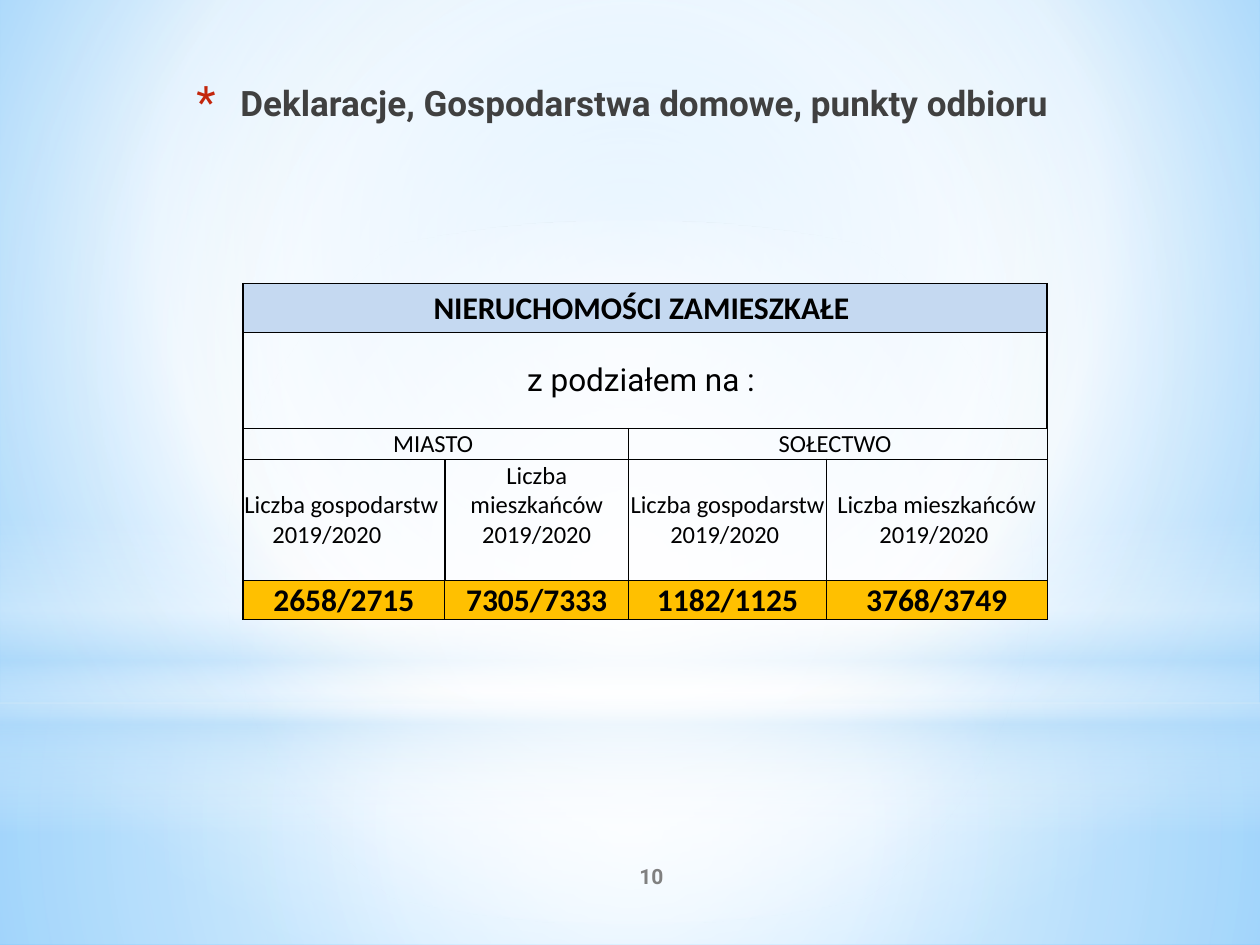
from lxml.etree import SubElement
from pptx import Presentation
from pptx.dml.color import RGBColor as Rgb
from pptx.enum.shapes import MSO_SHAPE as Preset
from pptx.enum.text import MSO_ANCHOR as Anchor, MSO_AUTO_SIZE as AutoSize, PP_ALIGN as Align
from pptx.oxml import parse_xml
from pptx.oxml.ns import nsdecls, qn
from pptx.util import Pt

THEME = {
    "ink": "000000", "title": "404040", "number": "808080", "bullet": "C3260C",
    "header": "C5D9F1", "result": "FFC000",
    "heading_font": "Roboto", "table_font": "Calibri",
    "title_size": 20, "large": 18, "small": 14, "number_size": 12,
    "thin": 0.5, "thick": 1,
}

TITLE = "Deklaracje, Gospodarstwa domowe, punkty odbioru"
PAGE_NUMBER = "10"

BACKDROP = {"stops": [(0, "9ED5FF", 100), (60, "FFFFFF", 100), (100, "5BB9FF", 100)],
            "focus": (20, 10, 20, 60)}
GLOWS = [
    {"box": (0, 401.76, 720, 138.24), "preset": Preset.RECTANGLE, "focus": (50, 50, 50, 50),
     "stops": [(0, "FFFFFF", 91), (37, "FFFFFF", 76), (100, "B4DCFA", 79)]},
    {"box": (0, 0, 720, 401.76), "preset": Preset.RECTANGLE, "focus": (50, 50, 50, 50),
     "stops": [(0, "FFFFFF", 89), (48, "FFFFFF", 62), (100, "B4DCFA", 79)]},
    {"box": (0, 296.64, 720, 180), "preset": Preset.RECTANGLE, "focus": None,
     "stops": [(0, "FFFFFF", 0), (29, "FFFFFF", 30), (45, "B4DCFA", 40),
               (55, "FFFFFF", 26), (65, "B4DCFA", 60), (100, "FFFFFF", 0)]},
    {"box": (0, 126, 720, 401.76), "preset": Preset.OVAL, "focus": (50, 50, 50, 50),
     "stops": [(0, "FFFFFF", 100), (56, "FFFFFF", 0)]},
]

TABLE_ORIGIN = (138.96, 162)
COLUMN_WIDTHS = (115.2, 105.12, 113.04, 126)
ROWS = [
    {"height": 28.08, "anchor": Anchor.MIDDLE, "size": "large", "bold": True, "fill": "header",
     "cells": [("NIERUCHOMOŚCI ZAMIESZKAŁE ", "LRT")]},
    {"height": 54.72, "anchor": Anchor.MIDDLE, "size": "large", "font": "heading_font",
     "cells": [("z podziałem na : ", "LR")]},
    {"height": 17.28, "cells": [("MIASTO ", "L"), ("SOŁECTWO ", "B")]},
    {"height": 68.4, "bottom": 17.1,
     "cells": [("Liczba gospodarstw\n2019/2020", "LR"), ("Liczba mieszkańców 2019/2020", "L"),
               ("Liczba gospodarstw\v2019/2020 ", "TR"), ("Liczba mieszkańców 2019/2020 ", "LT")]},
    {"height": 22.32, "size": "large", "bold": True, "fill": "result",
     "cells": [("2658/2715", "L"), ("7305/7333", ""), ("1182/1125", "R"), ("3768/3749", "L")]},
]


def apply(target, values):
    for key, value in values.items():
        setattr(target, key, value)


def style_text(frame, font, size, color, bold):
    for paragraph in frame.paragraphs:
        paragraph.alignment = Align.CENTER
        for run in paragraph.runs:
            apply(run.font, {"name": THEME[font], "size": Pt(THEME[size]), "bold": bold})
            run.font.color.rgb = Rgb.from_string(THEME[color])


def paint_gradient(fill, owner, stops, focus):
    fill.gradient()
    gradient = owner.xpath(".//a:gradFill")[0]
    for child in list(gradient):
        gradient.remove(child)
    stop_list = SubElement(gradient, qn("a:gsLst"))
    for position, color, opacity in stops:
        stop = SubElement(stop_list, qn("a:gs"), pos=str(position * 1000))
        tint = SubElement(stop, qn("a:srgbClr"), val=color)
        SubElement(tint, qn("a:alpha"), val=str(opacity * 1000))
    if focus:
        route = SubElement(gradient, qn("a:path"), path="circle")
        sides = {side: str(share * 1000) for side, share in zip("ltrb", focus)}
        SubElement(route, qn("a:fillToRect"), **sides)
    else:
        SubElement(gradient, qn("a:lin"), ang="5400000", scaled="0")


def add_backdrop(slide):
    paint_gradient(slide.background.fill, slide.element, **BACKDROP)
    for glow in GLOWS:
        panel = slide.shapes.add_shape(glow["preset"], *map(Pt, glow["box"]))
        panel.shadow.inherit = False
        panel.line.fill.background()
        paint_gradient(panel.fill, panel.element, glow["stops"], glow["focus"])


def add_title(slide):
    title = slide.shapes.title
    slide.shapes.element.append(title.element)
    apply(title, {"left": Pt(59.76), "top": Pt(43.2), "width": Pt(591.84), "height": Pt(42.48)})
    frame = title.text_frame
    frame.text = TITLE
    apply(frame, {"vertical_anchor": Anchor.TOP, "auto_size": AutoSize.NONE, "word_wrap": True})
    style_text(frame, "heading_font", "title_size", "title", True)
    bullet = frame.paragraphs[0]._p.get_or_add_pPr()
    bullet.set("marL", str(Pt(25.2)))
    bullet.set("indent", str(-Pt(25.2)))
    SubElement(SubElement(bullet, qn("a:buClr")), qn("a:srgbClr"), val=THEME["bullet"])
    SubElement(bullet, qn("a:buSzPct"), val="128000")
    SubElement(bullet, qn("a:buFont"), typeface=THEME["heading_font"])
    SubElement(bullet, qn("a:buChar"), char="*")


def add_page_number(slide):
    number = slide.shapes.add_textbox(Pt(300.24), Pt(486), Pt(144), Pt(28.8))
    frame = number.text_frame
    frame.text = PAGE_NUMBER
    apply(frame, {"word_wrap": True, "vertical_anchor": Anchor.MIDDLE})
    style_text(frame, "heading_font", "number_size", "number", True)


def draw_borders(cell, thick_sides):
    properties = cell._tc.get_or_add_tcPr()
    for index, side in enumerate("LRTB"):
        width = Pt(THEME["thick" if side in thick_sides else "thin"])
        properties.insert(index, parse_xml(
            f'<a:ln{side} {nsdecls("a")} w="{width}"><a:solidFill>'
            f'<a:srgbClr val="{THEME["ink"]}"/></a:solidFill></a:ln{side}>'))


def format_cell(cell, row, text, thick_sides):
    cell.text = text
    apply(cell, {"vertical_anchor": row.get("anchor", Anchor.BOTTOM),
                 "margin_left": Pt(0.72), "margin_right": Pt(0.72), "margin_top": Pt(0.72),
                 "margin_bottom": Pt(row.get("bottom", 0))})
    style_text(cell.text_frame, row.get("font", "table_font"), row.get("size", "small"),
               "ink", row.get("bold", False))
    if "fill" in row:
        cell.fill.solid()
        cell.fill.fore_color.rgb = Rgb.from_string(THEME[row["fill"]])
    else:
        cell.fill.background()
    draw_borders(cell, thick_sides)


def add_household_table(slide):
    column_count = len(COLUMN_WIDTHS)
    size = (sum(COLUMN_WIDTHS), sum(row["height"] for row in ROWS))
    table = slide.shapes.add_table(len(ROWS), column_count, *map(Pt, TABLE_ORIGIN + size)).table
    apply(table, {"first_row": False, "horz_banding": False})
    for column, width in zip(table.columns, COLUMN_WIDTHS):
        column.width = Pt(width)
    for row_index, row in enumerate(ROWS):
        table.rows[row_index].height = Pt(row["height"])
        span = column_count // len(row["cells"])
        for cell_index, (text, thick_sides) in enumerate(row["cells"]):
            first = cell_index * span
            for column_index in range(first, first + span):
                label = text if column_index == first else ""
                format_cell(table.cell(row_index, column_index), row, label, thick_sides)
            if span > 1:
                table.cell(row_index, first).merge(table.cell(row_index, first + span - 1))
    year_line = table.cell(3, 0).text_frame.paragraphs[1]
    for paragraph in table.cell(3, 0).text_frame.paragraphs:
        paragraph.alignment = Align.LEFT
    year_line._p.get_or_add_pPr().set("marL", str(Pt(16)))


def main():
    deck = Presentation()
    apply(deck, {"slide_width": Pt(720), "slide_height": Pt(540)})
    slide = deck.slides.add_slide(deck.slide_layouts[5])
    add_backdrop(slide)
    add_page_number(slide)
    add_title(slide)
    add_household_table(slide)
    deck.save("out.pptx")


if __name__ == "__main__":
    main()
